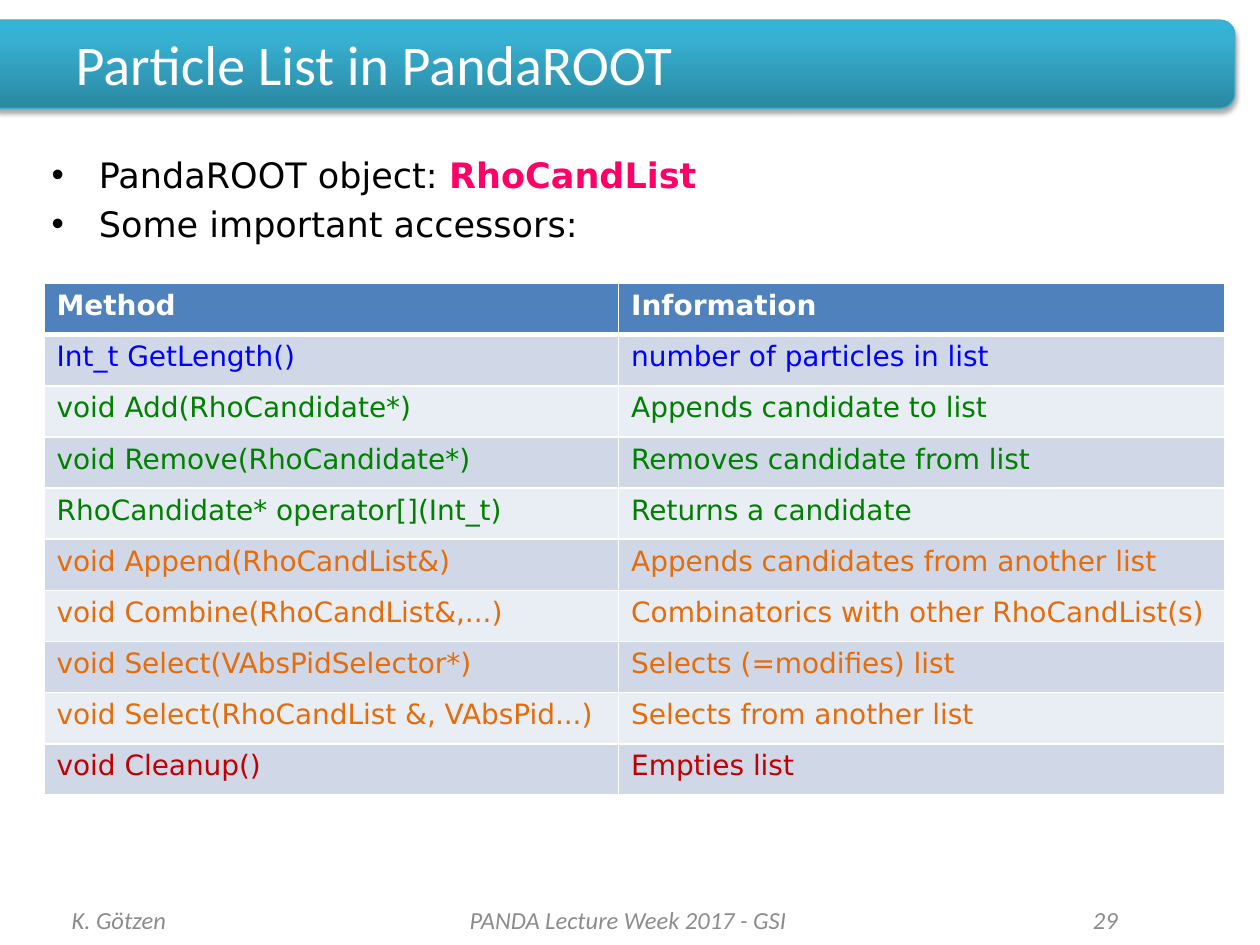
"""Build the slide on the particle list class and its accessors."""
from lxml.etree import SubElement
from pptx import Presentation
from pptx.dml.color import RGBColor
from pptx.enum.shapes import MSO_SHAPE as Shape
from pptx.enum.text import MSO_ANCHOR as Anchor, MSO_AUTO_SIZE as AutoSize, PP_ALIGN as Align
from pptx.oxml.ns import qn
from pptx.util import Pt

PX = 9144
THEME = {
    "banner": [(0, "2A88A2"), (80, "37B1D2"), (100, "34B4D6")],
    "banner_line": "46AAC5", "shadow": "000000", "rule": "FFFFFF",
    "head_fill": "4F81BD", "bands": ["D0D8E8", "E9EDF4"],
    "title": dict(name="Calibri", size=Pt(32), color="FFFFFF"),
    "body": dict(name="DejaVu Sans", size=Pt(20), color="000000"),
    "strong": dict(name="DejaVu Sans", size=Pt(20), color="FF0066", bold=True),
    "footer": dict(name="Calibri", size=Pt(14), color="8C8C8C", italic=True),
    "head": dict(name="DejaVu Sans", size=Pt(16), color="FFFFFF", bold=True),
    "cell": dict(name="DejaVu Sans", size=Pt(16), bold=False),
}
TITLE = "Particle List in PandaROOT"
BULLETS = [
    [("PandaROOT object: ", "body"), ("RhoCandList", "strong")],
    [("Some important accessors:", "body")],
]
HEADINGS = ("Method", "Information")
ACCESSORS = [
    ("0000FF", [("Int_t GetLength()", "number of particles in list")]),
    ("008000", [
        ("void Add(RhoCandidate*)", "Appends candidate to list"),
        ("void Remove(RhoCandidate*)", "Removes candidate from list"),
        ("RhoCandidate* operator[](Int_t)", "Returns a candidate")]),
    ("E46C0A", [
        ("void Append(RhoCandList&)", "Appends candidates from another list"),
        ("void Combine(RhoCandList&,...)", "Combinatorics with other RhoCandList(s)"),
        ("void Select(VAbsPidSelector*)", "Selects (=modifies) list"),
        ("void Select(RhoCandList &, VAbsPid...)", "Selects from another list")]),
    ("C00000", [("void Cleanup()", "Empties list")]),
]
FOOTERS = [
    ("K. Götzen", 47, 233, Align.LEFT),
    ("PANDA Lecture Week 2017 - GSI", 303, 391, Align.CENTER),
    ("29", 750, 147, Align.RIGHT),
]
COLUMNS = (456, 481)
TABLE_LEFT, TABLE_TOP, TABLE_HEIGHT = 35, 225, 406


def emu(*lengths):
    return [length * PX for length in lengths]


def place(shape, *box):
    for name, value in zip(("left", "top", "width", "height"), emu(*box)):
        setattr(shape, name, value)


def write(para, text, style):
    span = para.add_run()
    span.text = text
    for name, value in style.items():
        if name == "color":
            span.font.color.rgb = RGBColor.from_string(value)
        else:
            setattr(span.font, name, value)


def add_color(parent, color):
    return SubElement(parent, qn("a:srgbClr"), val=color)


def add_banner(page):
    banner = page.shapes.add_shape(Shape.ROUNDED_RECTANGLE, *emu(-12, 16, 992, 70))
    banner.fill.gradient()
    banner.fill.gradient_angle = 90
    properties = banner._element.spPr
    stops = properties.find(".//" + qn("a:gsLst"))
    for stop in list(stops):
        stops.remove(stop)
    for percent, color in THEME["banner"]:
        add_color(SubElement(stops, qn("a:gs"), pos=str(percent * 1000)), color)
    banner.line.color.rgb = RGBColor.from_string(THEME["banner_line"])
    banner.line.width = Pt(0.75)
    banner.shadow.inherit = False
    shadow = SubElement(properties.find(qn("a:effectLst")), qn("a:outerShdw"),
                        blurRad=str(Pt(3.1)), dist=str(Pt(1.8)), dir="5400000", rotWithShape="0")
    SubElement(add_color(shadow, THEME["shadow"]), qn("a:alpha"), val="35000")
    page.shapes._spTree.insert(2, banner._element)


def add_title(page):
    title = page.shapes.title
    place(title, 50, 18, 900, 64)
    title.text_frame.auto_size = AutoSize.NONE
    title.text_frame.vertical_anchor = Anchor.MIDDLE
    para = title.text_frame.paragraphs[0]
    para.alignment = Align.LEFT
    write(para, TITLE, THEME["title"])


def add_bullets(page):
    body = page.placeholders[1]
    place(body, 31, 117, 938, 578)
    frame = body.text_frame
    frame.auto_size = AutoSize.NONE
    for index, spans in enumerate(BULLETS):
        para = frame.add_paragraph() if index else frame.paragraphs[0]
        for text, style in spans:
            write(para, text, THEME[style])


def add_footers(page):
    for text, left, width, alignment in FOOTERS:
        frame = page.shapes.add_textbox(*emu(left, 710, width, 40)).text_frame
        frame.word_wrap = True
        frame.vertical_anchor = Anchor.MIDDLE
        frame.paragraphs[0].alignment = alignment
        write(frame.paragraphs[0], text, THEME["footer"])


def add_borders(cell, widths):
    properties = cell._tc.get_or_add_tcPr()
    for index, (side, width) in enumerate(widths.items()):
        line = properties.makeelement(qn("a:ln" + side), {"w": str(Pt(width))})
        add_color(SubElement(line, qn("a:solidFill")), THEME["rule"])
        properties.insert(index, line)


def add_accessors(page):
    rows = [(HEADINGS, THEME["head"])]
    rows += [(texts, {**THEME["cell"], "color": color})
             for color, group in ACCESSORS for texts in group]
    table = page.shapes.add_table(len(rows), len(COLUMNS), *emu(
        TABLE_LEFT, TABLE_TOP, sum(COLUMNS), TABLE_HEIGHT)).table
    for column, width in zip(table.columns, COLUMNS):
        column.width = width * PX
    for index, (texts, style) in enumerate(rows):
        table.rows[index].height = TABLE_HEIGHT * PX // len(rows)
        fill = THEME["bands"][(index - 1) % 2] if index else THEME["head_fill"]
        widths = {"L": 1, "R": 1, "T": 3 if index == 1 else 1, "B": 1 if index else 3}
        for cell, text in zip(table.rows[index].cells, texts):
            cell.fill.solid()
            cell.fill.fore_color.rgb = RGBColor.from_string(fill)
            add_borders(cell, widths)
            write(cell.text_frame.paragraphs[0], text, style)


def main():
    deck = Presentation()
    deck.slide_width, deck.slide_height = emu(1000, 750)
    page = deck.slides.add_slide(deck.slide_layouts[1])
    for build in (add_banner, add_title, add_bullets, add_footers, add_accessors):
        build(page)
    deck.save("out.pptx")


if __name__ == "__main__":
    main()
